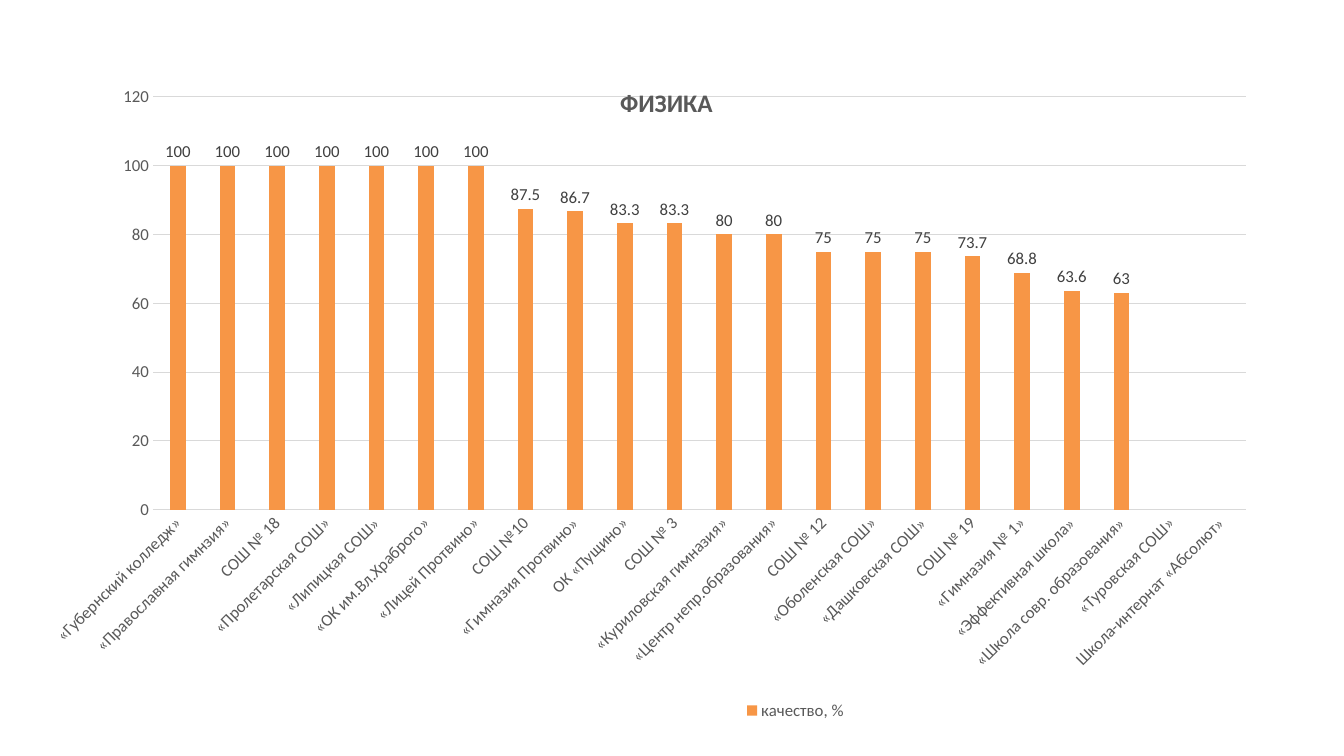
from lxml import etree
from pptx import Presentation
from pptx.chart.data import CategoryChartData
from pptx.dml.color import RGBColor
from pptx.enum import chart as ch
from pptx.oxml import ns
from pptx.util import Inches, Pt

TITLE = "ФИЗИКА"
SERIES = "качество, %"
SCHOOLS = [
    ("«Губернский колледж»", 100),
    ("«Православная гимнзия»", 100),
    ("СОШ № 18", 100),
    ("«Пролетарская СОШ»", 100),
    ("«Липицкая СОШ»", 100),
    ("«ОК им.Вл.Храброго»", 100),
    ("«Лицей Протвино»", 100),
    ("СОШ №10", 87.5),
    ("«Гимназия Протвино»", 86.7),
    ("ОК «Пущино»", 83.3),
    ("СОШ № 3", 83.3),
    ("«Куриловская гимназия»", 80),
    ("«Центр непр.образования»", 80),
    ("СОШ № 12", 75),
    ("«Оболенская СОШ»", 75),
    ("«Дашковская СОШ»", 75),
    ("СОШ № 19", 73.7),
    ("«Гимназия № 1»", 68.8),
    ("«Эффективная школа»", 63.6),
    ("«Школа совр. образования»", 63),
    ("«Туровская СОШ»", None),
    ("Школа-интернат «Абсолют»", None),
]
ORANGE = RGBColor(0xF7, 0x96, 0x46)
GRAY = RGBColor(0x59, 0x59, 0x59)
DARK = RGBColor(0x40, 0x40, 0x40)
PALE = RGBColor(0xD9, 0xD9, 0xD9)


def style(font, size=12, color=GRAY, bold=False):
    font.name, font.size, font.bold = "Calibri", Pt(size), bold
    font.color.rgb = color


def rule(line):
    line.color.rgb, line.width = PALE, Pt(0.75)


def place(part, x, y, w=None, h=None):
    """Set a manual layout, in fractions of the chart, on a chart part."""
    for old in part.findall(ns.qn("c:layout")):
        part.remove(old)
    box = etree.Element(ns.qn("c:layout"))
    man = etree.SubElement(box, ns.qn("c:manualLayout"))
    tags = [("xMode", "edge"), ("yMode", "edge"), ("x", x), ("y", y)]
    if w:
        tags = [("layoutTarget", "inner")] + tags + [("w", w), ("h", h)]
    for tag, val in tags:
        etree.SubElement(man, ns.qn("c:" + tag)).set("val", str(val))
    over = part.find(ns.qn("c:overlay"))
    if over is None:
        part.insert(0, box)
    else:
        over.addprevious(box)


prs = Presentation()
prs.slide_width, prs.slide_height = Inches(13.33), Inches(7.5)
slide = prs.slides.add_slide(prs.slide_layouts[6])

data = CategoryChartData()
data.categories = [name for name, _ in SCHOOLS]
data.add_series(SERIES, [val for _, val in SCHOOLS])
chart = slide.shapes.add_chart(
    ch.XL_CHART_TYPE.COLUMN_CLUSTERED,
    Inches(0.48), Inches(0.46), Inches(12.5), Inches(6.79), data).chart
style(chart.font, 10, RGBColor(0, 0, 0))

chart.has_title = True
head = chart.chart_title
head.text_frame.text = TITLE
style(head.text_frame.paragraphs[0].runs[0].font, 18, bold=True)
head.include_in_layout = True
place(head._element, 0.45, 0.05)

chart.has_legend = True
key = chart.legend
key.position = ch.XL_LEGEND_POSITION.BOTTOM
key.include_in_layout = False
style(key.font)
place(key._element, 0.55, 0.95)

plot = chart.plots[0]
plot.gap_width, plot.overlap, plot.vary_by_categories = 219, -27, False
bars = plot.series[0]
bars.format.fill.solid()
bars.format.fill.fore_color.rgb = ORANGE
bars.invert_if_negative = False
tags = bars.data_labels
tags.show_value = True
tags.position = ch.XL_LABEL_POSITION.OUTSIDE_END
style(tags.font, color=DARK)
place(chart._chartSpace.chart.plotArea, 0.083, 0.074, 0.867, 0.603)

cat, val = chart.category_axis, chart.value_axis
for axis in (cat, val):
    axis.major_tick_mark = axis.minor_tick_mark = ch.XL_TICK_MARK.NONE
    style(axis.tick_labels.font)
cat.has_major_gridlines = False
rule(cat.format.line)
cat._element.find(ns.qn("c:txPr")).find(ns.qn("a:bodyPr")).set("rot", "-2700000")
val.minimum_scale, val.maximum_scale, val.major_unit = 0, 120, 20
val.format.line.fill.background()
val.has_major_gridlines = True
rule(val.major_gridlines.format.line)

prs.save("out.pptx")
